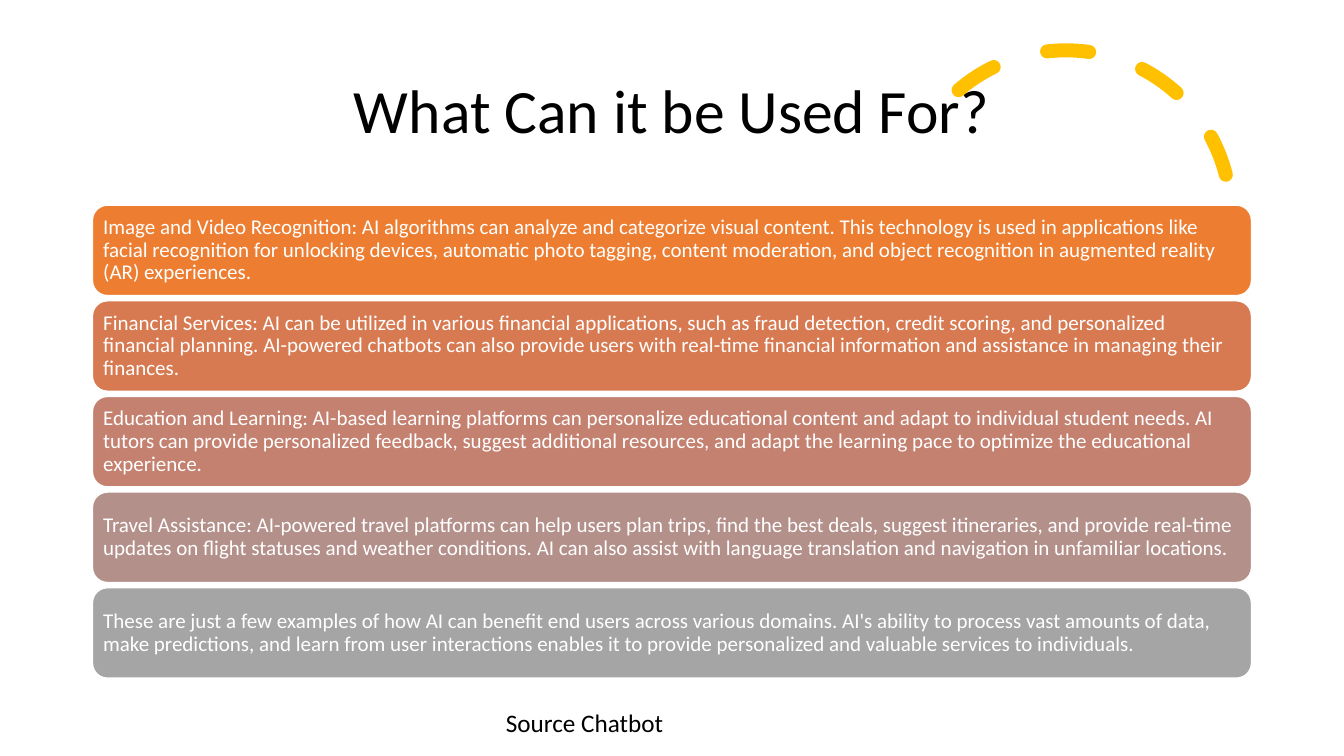
from pptx import Presentation
from pptx.dml.color import RGBColor
from pptx.enum.dml import MSO_LINE
from pptx.enum.shapes import MSO_SHAPE as Preset
from pptx.enum.text import MSO_ANCHOR as Anchor, PP_ALIGN as Align
from pptx.util import Cm, Pt

TITLE = "What Can it be Used For?"
SOURCE = "Source Chatbot"
USES = [
    ("orange", "Image and Video Recognition: AI algorithms can analyze and categorize visual content. "
     "This technology is used in applications like facial recognition for unlocking devices, "
     "automatic photo tagging, content moderation, and object recognition in augmented reality (AR) experiences."),
    ("copper", "Financial Services: AI can be utilized in various financial applications, such as fraud "
     "detection, credit scoring, and personalized financial planning. AI-powered chatbots can also provide "
     "users with real-time financial information and assistance in managing their finances."),
    ("rose", "Education and Learning: AI-based learning platforms can personalize educational content and "
     "adapt to individual student needs. AI tutors can provide personalized feedback, suggest additional "
     "resources, and adapt the learning pace to optimize the educational experience."),
    ("mauve", "Travel Assistance: AI-powered travel platforms can help users plan trips, find the best deals, "
     "suggest itineraries, and provide real-time updates on flight statuses and weather conditions. "
     "AI can also assist with language translation and navigation in unfamiliar locations."),
    ("gray", "These are just a few examples of how AI can benefit end users across various domains. "
     "AI's ability to process vast amounts of data, make predictions, and learn from user interactions "
     "enables it to provide personalized and valuable services to individuals."),
]
COLORS = {
    "orange": "ED7D31", "copper": "D87A51", "rose": "C48170", "mauve": "B4908B", "gray": "A5A5A5",
    "yellow": "FFC000", "white": "FFFFFF", "black": "000000",
}
FONT = "Calibri"
LEFT, WIDTH = 2.33, 29.21
BAR_TOP, BAR_HEIGHT, BAR_PITCH = 5.17, 2.28, 2.41
BAR_INSET = 0.16


def color(name):
    return RGBColor.from_string(COLORS[name])


def write(frame, words, size, ink, align, spacing):
    frame.text = words
    frame.word_wrap = True
    paragraph = frame.paragraphs[0]
    paragraph.alignment = align
    paragraph.line_spacing = spacing
    font = paragraph.runs[0].font
    font.name, font.size = FONT, Pt(size)
    font.color.rgb = color(ink)


def add_bar(shapes, row, fill, words):
    bar = shapes.add_shape(Preset.ROUNDED_RECTANGLE, Cm(LEFT), Cm(BAR_TOP + row * BAR_PITCH),
                           Cm(WIDTH), Cm(BAR_HEIGHT))
    bar.shadow.inherit = False
    bar.fill.solid()
    bar.fill.fore_color.rgb = color(fill)
    bar.line.color.rgb = color("white")
    bar.line.width = Pt(1)
    frame = bar.text_frame
    frame.margin_left = frame.margin_right = frame.margin_top = frame.margin_bottom = Cm(BAR_INSET)
    frame.vertical_anchor = Anchor.MIDDLE
    write(frame, words, 15, "white", Align.LEFT, 0.9)


def add_arc(shapes):
    arc = shapes.add_shape(Preset.ARC, Cm(22.71), Cm(1.27), Cm(8.31), Cm(8.31))
    arc.adjustments[0], arc.adjustments[1] = 146.13, 0
    arc.rotation = 345.8
    arc.shadow.inherit = False
    arc.fill.background()
    arc.line.color.rgb = color("yellow")
    arc.line.width = Pt(10)
    arc.line.dash_style = MSO_LINE.DASH
    arc.line._ln.set("cap", "rnd")
    return arc


def main():
    deck = Presentation()
    deck.slide_width, deck.slide_height = Cm(33.87), Cm(19.05)
    slide = deck.slides.add_slide(deck.slide_layouts[5])
    shapes = slide.shapes

    title = shapes.title
    title.left, title.top, title.width, title.height = Cm(LEFT), Cm(1.01), Cm(WIDTH), Cm(3.68)
    title.text_frame.vertical_anchor = Anchor.MIDDLE
    write(title.text_frame, TITLE, 44, "black", Align.CENTER, 0.9)

    arc = add_arc(shapes)
    title._element.addprevious(arc._element)

    for row, (fill, words) in enumerate(USES):
        add_bar(shapes, row, fill, words)

    source = shapes.add_textbox(Cm(12.5), Cm(17.7), Cm(5.46), Cm(1.02))
    write(source.text_frame, SOURCE, 18, "black", Align.LEFT, 1.0)

    deck.save("out.pptx")


if __name__ == "__main__":
    main()
